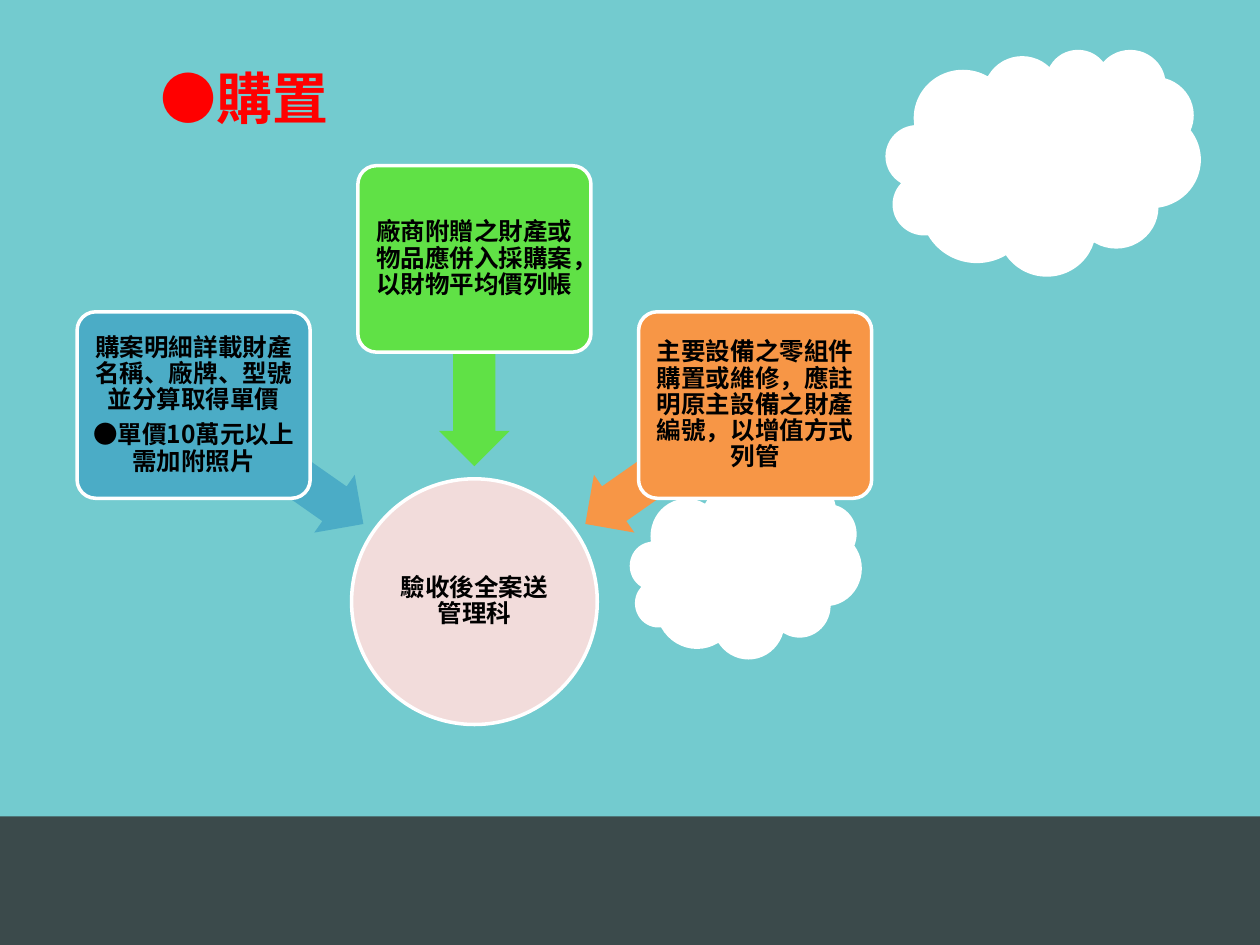
from math import cos, radians, sin

from lxml import etree
from pptx import Presentation
from pptx.dml.color import RGBColor
from pptx.enum.shapes import MSO_SHAPE
from pptx.enum.text import MSO_ANCHOR, PP_ALIGN
from pptx.oxml.ns import qn
from pptx.util import Inches, Pt

RECT, CLOUD = MSO_SHAPE.RECTANGLE, MSO_SHAPE.CLOUD
OVAL, ROUNDED = MSO_SHAPE.OVAL, MSO_SHAPE.ROUNDED_RECTANGLE
ARROW = MSO_SHAPE.LEFT_ARROW
MIDDLE = MSO_ANCHOR.MIDDLE
CENTER, LEFT = PP_ALIGN.CENTER, PP_ALIGN.LEFT

FONT = "Noto Sans CJK SC"
COLORS = {
    "sky": "73CBCF", "ground": "3B4A4B", "white": "FFFFFF", "title": "FF0000",
    "text": "000000", "hub": "F2DCDB", "blue": "4BACC6", "green": "60E146",
    "orange": "F79646",
}
HUB_TEXT = "驗收後全案送管理科"
STEPS = [
    (215, "blue", ["購案明細詳載財產名稱、廠牌、型號並分算取得單價",
                   "●單價10萬元以上需加附照片"]),
    (270, "green", ["廠商附贈之財產或物品應併入採購案，以財物平均價列帳"]),
    (325, "orange", ["主要設備之零組件購置或維修，應註明原主設備之財產編號，以增值方式列管"]),
]


def rgb(name):
    return RGBColor.from_string(COLORS[name])


def add_shape(s, kind, box, fill, outlined=False):
    sp = s.shapes.add_shape(kind, *map(Inches, box))
    sp.shadow.inherit = False
    sp.fill.solid()
    sp.fill.fore_color.rgb = rgb(fill)
    if outlined:
        sp.line.color.rgb = rgb("white")
        sp.line.width = Pt(2)
    else:
        sp.line.fill.background()
    return sp


def write_run(p, text, size, color):
    r = p.add_run()
    r.text = text
    for name, value in {"name": FONT, "size": Pt(size), "bold": True}.items():
        setattr(r.font, name, value)
    r.font.color.rgb = rgb(color)
    etree.SubElement(r.font._element, qn("a:ea"), typeface=FONT)


def write_label(sp, lines, inset):
    tf = sp.text_frame
    margins = dict.fromkeys(
        ["margin_left", "margin_right", "margin_top", "margin_bottom"], Inches(inset))
    for name, value in {"word_wrap": True, "vertical_anchor": MIDDLE, **margins}.items():
        setattr(tf, name, value)
    for i, line in enumerate(lines):
        p = tf.paragraphs[0] if i == 0 else tf.add_paragraph()
        p.alignment = CENTER
        p.line_spacing = Pt(15)
        if i:
            p.space_before = Pt(5)
        write_run(p, line, 14, "text")


def add_scenery(s, width, height):
    s.background.fill.solid()
    s.background.fill.fore_color.rgb = rgb("sky")
    ground = 1.02
    add_shape(s, RECT, (0, height - ground, width, ground), "ground")
    for box in [(7.03, 0.39, 2.5, 1.8), (5, 3.83, 1.84, 1.4)]:
        add_shape(s, CLOUD, box, "white")


def add_title(s, text, box):
    sp = s.shapes.title
    sp.left, sp.top, sp.width, sp.height = map(Inches, box)
    sp.text_frame.vertical_anchor = MIDDLE
    p = sp.text_frame.paragraphs[0]
    p.alignment = LEFT
    write_run(p, text, 32, "title")


def add_converging_diagram(s, box):
    left, top, width, height = box
    hub, arrow_w, arrow_h, card_w, card_h = 1.95, 1.65, 0.56, 1.85, 1.48
    cx, cy = left + width / 2, top + height - hub / 2

    def place(angle, distance, w, h):
        x = cx + distance * cos(radians(angle))
        y = cy + distance * sin(radians(angle))
        return x - w / 2, y - h / 2, w, h

    sp = add_shape(s, OVAL, place(0, 0, hub, hub), "hub", True)
    write_label(sp, [HUB_TEXT], 0.01)
    for angle, color, lines in STEPS:
        arrow = add_shape(s, ARROW, place(angle, 1.9, arrow_w, arrow_h), color)
        arrow.rotation = angle
        arrow.adjustments[0] = 0.6
        card = add_shape(s, ROUNDED, place(angle, 2.72, card_w, card_h), color, True)
        card.adjustments[0] = 0.1
        write_label(card, lines, 0.03)


def main():
    prs = Presentation()
    width, height = 10, 7.5
    prs.slide_width, prs.slide_height = Inches(width), Inches(height)
    s = prs.slides.add_slide(prs.slide_layouts[5])
    add_scenery(s, width, height)
    add_title(s, "●購置", (1.17, 0.47, 5.08, 0.6))
    add_converging_diagram(s, (0.61, 1.31, 6.31, 4.44))
    prs.save("out.pptx")


if __name__ == "__main__":
    main()
